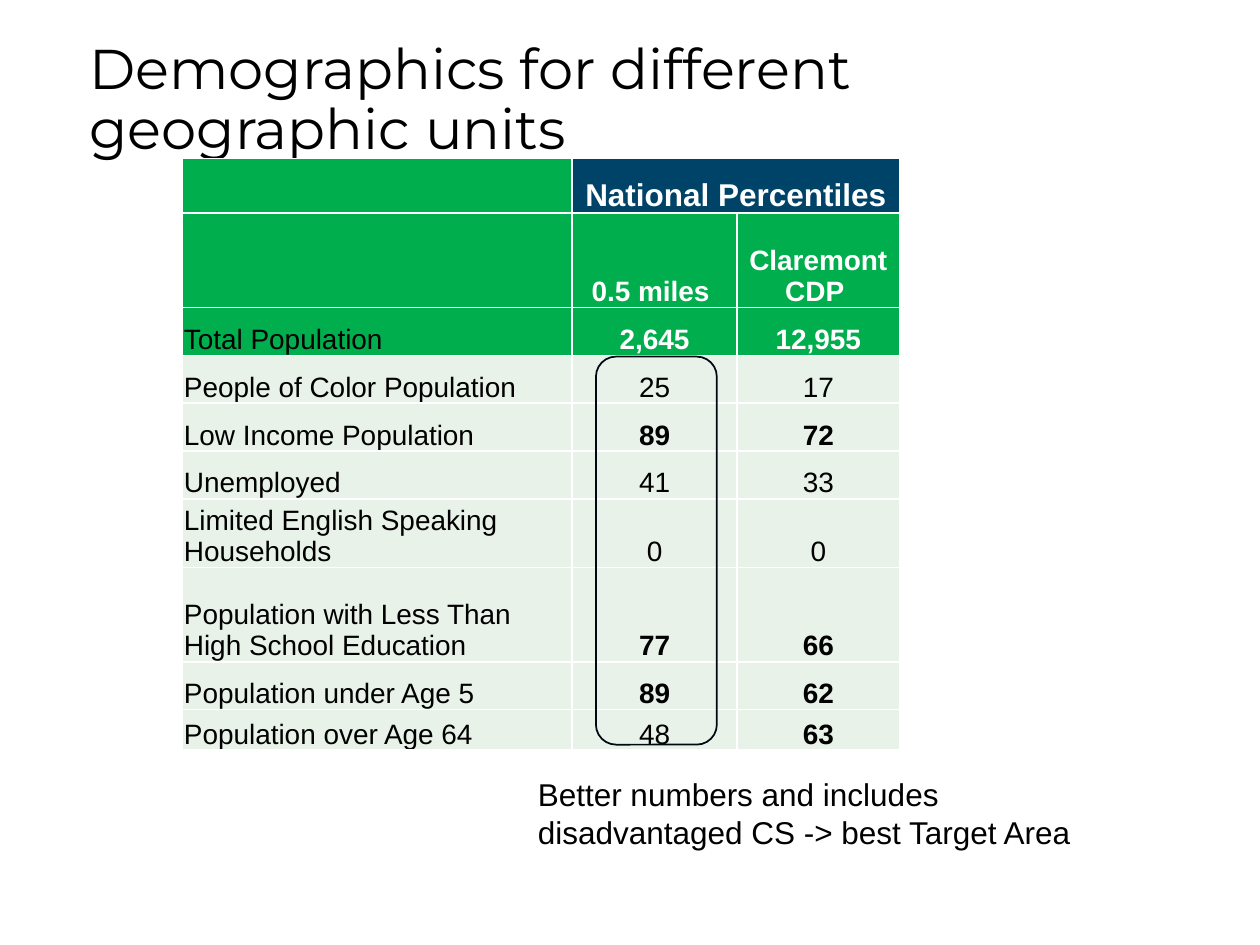
"""Build a slide comparing demographic percentiles for two geographic units."""
from dataclasses import dataclass

import lxml.etree
import pptx
import pptx.dml.color
import pptx.enum.shapes
import pptx.enum.text
import pptx.oxml.ns
import pptx.util

Inches = pptx.util.Inches
Pt = pptx.util.Pt
ALIGN = pptx.enum.text.PP_ALIGN
ANCHOR = pptx.enum.text.MSO_ANCHOR

COLORS = {
    "text": "000000",
    "white": "FFFFFF",
    "green": "00AE4D",
    "navy": "004369",
    "pale": "E8F2E8",
    "outline": "020714",
}
COL_WIDTHS = (3.09, 1.31, 1.29)
HIGH_PERCENTILE = 60


@dataclass
class Row:
    """One table row with its height in inches."""

    label: str
    near: str
    cdp: str
    height: float = 0.38
    header: bool = False


@dataclass
class TextSpec:
    """A text box with its place in inches and its type."""

    text: str
    left: float
    top: float
    width: float
    height: float
    font: str
    size: int
    spacing: float
    anchor: ANCHOR


ROWS = [
    Row("", "National Percentiles", "", 0.43, True),
    Row("", "0.5 miles ", "Claremont CDP ", 0.75, True),
    Row("Total Population", "2,645", "12,955", header=True),
    Row("People of Color Population", "25", "17"),
    Row("Low Income Population", "89", "72"),
    Row("Unemployed", "41", "33"),
    Row("Limited English Speaking Households", "0", "0", 0.52),
    Row("Population with Less Than High School Education", "77", "66", 0.75),
    Row("Population under Age 5", "89", "62"),
    Row("Population over Age 64", "48", "63", 0.32),
]

TITLE = TextSpec("Demographics for different geographic units",
                 0.61, 0.08, 8.62, 1.45, "Montserrat", 32, 0.9, ANCHOR.MIDDLE)
CONCLUSION = TextSpec("Better numbers and includes disadvantaged CS -> best Target Area",
                      4.17, 6.1, 5.07, 0.71, "Arial", 18, 1.0, ANCHOR.TOP)


def rgb(name: str) -> pptx.dml.color.RGBColor:
    """Look up a named colour."""
    return pptx.dml.color.RGBColor.from_string(COLORS[name])


def style_font(font, name: str, size: int, color: str, bold: bool = False) -> None:
    """Set the typeface, size, colour and weight of a font."""
    font.name = name
    font.size = Pt(size)
    font.bold = bold
    font.color.rgb = rgb(color)


def add_text(s, spec: TextSpec) -> None:
    """Add a wrapped text box."""
    box = s.shapes.add_textbox(Inches(spec.left), Inches(spec.top),
                               Inches(spec.width), Inches(spec.height))
    tf = box.text_frame
    tf.word_wrap = True
    tf.vertical_anchor = spec.anchor
    tf.text = spec.text
    p = tf.paragraphs[0]
    p.line_spacing = spec.spacing
    style_font(p.runs[0].font, spec.font, spec.size, "text")


def set_borders(cell) -> None:
    """Give a cell thin white borders on all sides."""
    qn = pptx.oxml.ns.qn
    props = cell._tc.get_or_add_tcPr()
    for index, side in enumerate(("lnL", "lnR", "lnT", "lnB")):
        line = lxml.etree.Element(qn(f"a:{side}"), w=str(Pt(1)))
        fill = lxml.etree.SubElement(line, qn("a:solidFill"))
        lxml.etree.SubElement(fill, qn("a:srgbClr"), val=COLORS["white"])
        props.insert(index, line)


def fill_cell(cell, text: str, fill: str, color: str, size: int,
              bold: bool, align: ALIGN) -> None:
    """Write and format one table cell."""
    cell.margin_left = cell.margin_right = cell.margin_top = Inches(0.01)
    cell.margin_bottom = 0
    cell.vertical_anchor = ANCHOR.BOTTOM
    cell.fill.solid()
    cell.fill.fore_color.rgb = rgb(fill)
    set_borders(cell)
    cell.text_frame.text = text
    p = cell.text_frame.paragraphs[0]
    p.alignment = align
    style_font(p.font, "Arial", size, color, bold)
    for r in p.runs:
        style_font(r.font, "Arial", size, color, bold)


def add_demographics(s, rows: list[Row]) -> None:
    """Add the percentile table."""
    frame = s.shapes.add_table(len(rows), len(COL_WIDTHS), Inches(1.45), Inches(1.26),
                               Inches(sum(COL_WIDTHS)),
                               Inches(sum(row.height for row in rows)))
    table = frame.table
    table.horz_banding = False
    table.first_row = False
    for column, width in zip(table.columns, COL_WIDTHS):
        column.width = Inches(width)
    for i, row in enumerate(rows):
        table.rows[i].height = Inches(row.height)
        fill = "green" if row.header else "pale"
        fill_cell(table.cell(i, 0), row.label, fill, "text", 16, False, ALIGN.LEFT)
        for j, value in enumerate((row.near, row.cdp), start=1):
            bold = row.header or int(value) > HIGH_PERCENTILE
            fill_cell(table.cell(i, j), value, "navy" if i == 0 else fill,
                      "white" if row.header else "text",
                      18 if i == 0 else 16, bold, ALIGN.CENTER)
    table.cell(0, 1).merge(table.cell(0, 2))


def add_highlight(s) -> None:
    """Outline the half-mile percentiles."""
    sp = s.shapes.add_shape(pptx.enum.shapes.MSO_SHAPE.ROUNDED_RECTANGLE,
                            Inches(4.73), Inches(2.83), Inches(0.96), Inches(3.08))
    sp.shadow.inherit = False
    sp.fill.background()
    sp.line.color.rgb = rgb("outline")
    sp.line.width = Pt(1)


def main() -> None:
    """Build and save the slide."""
    prs = pptx.Presentation()
    prs.slide_width = Inches(10)
    prs.slide_height = Inches(7.5)
    s = prs.slides.add_slide(prs.slide_layouts[6])
    add_text(s, TITLE)
    add_demographics(s, ROWS)
    add_highlight(s)
    add_text(s, CONCLUSION)
    prs.save("out.pptx")


if __name__ == "__main__":
    main()
